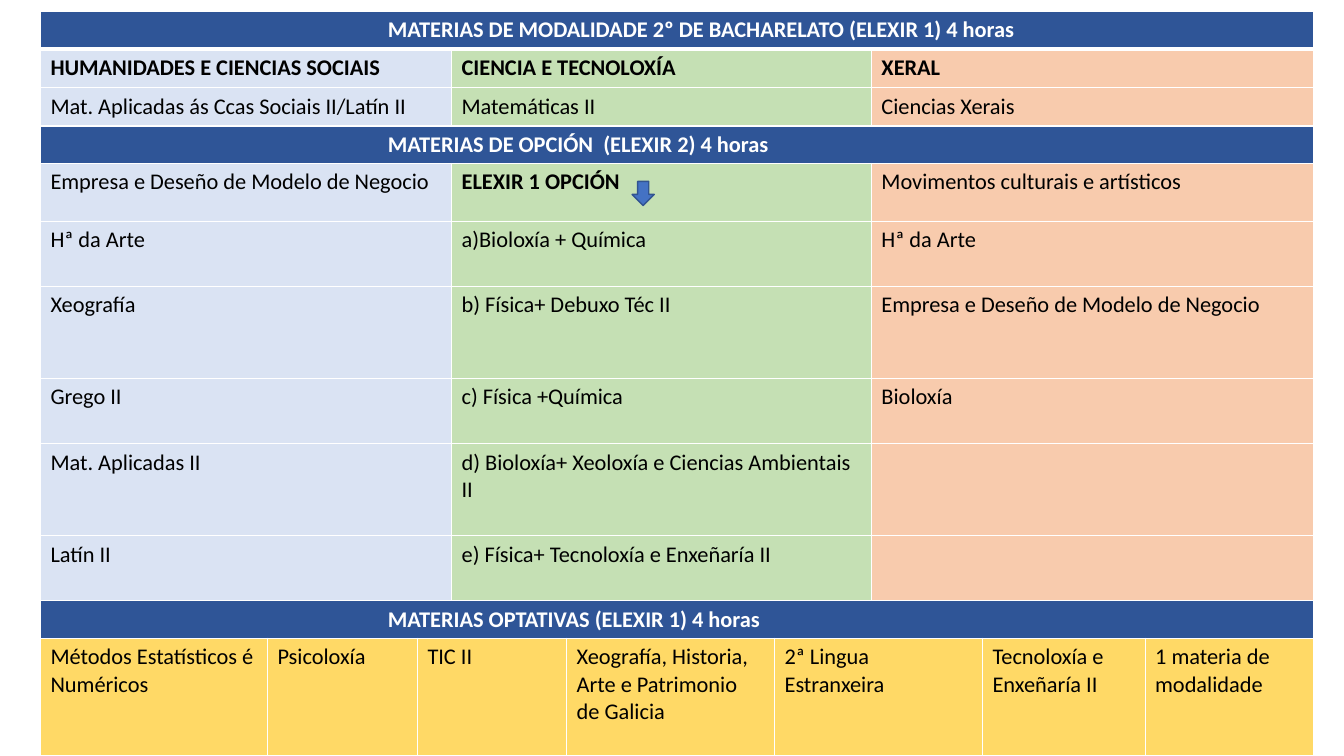
"""Build the slide with the table of second-year Bacharelato subjects."""
from dataclasses import dataclass

from lxml import etree
from pptx import Presentation
from pptx.dml.color import RGBColor
from pptx.enum import shapes
from pptx.oxml import ns
from pptx.util import Cm, Length, Pt


@dataclass(frozen=True)
class Theme:
    """Colours, font and sizes of the slide."""
    font: str = "Calibri"
    size: int = 16
    dark: str = "000000"
    white: str = "FFFFFF"
    band: str = "2F5597"
    human: str = "DAE3F3"
    tech: str = "C5E0B4"
    broad: str = "F8CBAD"
    choice: str = "FFD966"
    arrow: str = "4472C4"
    edge: str = "325491"
    thin: int = 1
    thick: int = 3


@dataclass(frozen=True)
class Row:
    """One table row: its height, cell texts, layout and weight."""
    high: float
    texts: tuple[str, ...]
    kind: str = "track"
    bold: tuple[int, ...] = ()


@dataclass(frozen=True)
class Plan:
    """First columns, fills, text colour and indent of a kind of row."""
    starts: tuple[int, ...]
    fills: tuple[str, ...]
    ink: str
    indent: float = 0


THEME = Theme()
WIDTHS = (5.72, 3.78, 0.86, 2.9, 5.24, 2.44, 2.8, 4.1, 4.24)
PLANS = {
    "band": Plan((0,), (THEME.band,), THEME.white, 8.5),
    "track": Plan((0, 3, 6), (THEME.human, THEME.tech, THEME.broad), THEME.dark),
    "choice": Plan((0, 1, 2, 4, 5, 7, 8), (THEME.choice,) * 7, THEME.dark),
}
ROWS = (
    Row(0.93, ("MATERIAS DE MODALIDADE 2º DE BACHARELATO (ELEXIR 1) 4 horas",), "band", (0,)),
    Row(0.98, ("HUMANIDADES E CIENCIAS SOCIAIS", "CIENCIA E TECNOLOXÍA", "XERAL"),
        bold=(0, 1, 2)),
    Row(0.96, ("Mat. Aplicadas ás Ccas Sociais II/Latín II", "Matemáticas II",
               "Ciencias Xerais")),
    Row(0.93, ("MATERIAS DE OPCIÓN  (ELEXIR 2) 4 horas",), "band", (0,)),
    Row(1.46, ("Empresa e Deseño de Modelo de Negocio", "ELEXIR 1 OPCIÓN",
               "Movimentos culturais e artísticos"), bold=(1,)),
    Row(1.64, ("Hª da Arte", "a)Bioloxía + Química", "Hª da Arte")),
    Row(2.32, ("Xeografía", "b) Física+ Debuxo Téc II",
               "Empresa e Deseño de Modelo de Negocio")),
    Row(1.64, ("Grego II", "c) Física +Química", "Bioloxía")),
    Row(2.32, ("Mat. Aplicadas II", "d) Bioloxía+ Xeoloxía e Ciencias Ambientais II", "")),
    Row(1.64, ("Latín II", "e) Física+ Tecnoloxía e Enxeñaría II", "")),
    Row(0.93, ("MATERIAS OPTATIVAS (ELEXIR 1) 4 horas",), "band", (0,)),
    Row(2.95, ("Métodos Estatísticos é Numéricos", "Psicoloxía", "TIC II",
               "Xeografía, Historia, Arte e Patrimonio de Galicia",
               "2ª Lingua Estranxeira", "Tecnoloxía e Enxeñaría II",
               "1 materia de modalidade"), "choice"),
)


def tint(fill, shade: str) -> None:
    """Make a fill solid in one colour."""
    fill.solid()
    fill.fore_color.rgb = RGBColor.from_string(shade)


def rule(cell, top: int, base: int) -> None:
    """Draw the white borders of a cell."""
    props = cell._tc.get_or_add_tcPr()
    sides = (("L", THEME.thin), ("R", THEME.thin), ("T", top), ("B", base))
    for spot, (side, width) in enumerate(sides):
        line = etree.Element(ns.qn(f"a:ln{side}"), w=str(Pt(width)))
        solid = etree.SubElement(line, ns.qn("a:solidFill"))
        etree.SubElement(solid, ns.qn("a:srgbClr"), val=THEME.white)
        props.insert(spot, line)


def write(cell, words: str, plan: Plan, bold: bool) -> None:
    """Put formatted text in a cell."""
    cell.text_frame.text = words
    para = cell.text_frame.paragraphs[0]
    if plan.indent:
        para._p.get_or_add_pPr().set("marL", str(Cm(plan.indent)))
    for run in para.runs:
        run.font.name = THEME.font
        run.font.size = Pt(THEME.size)
        run.font.bold = bold
        run.font.color.rgb = RGBColor.from_string(plan.ink)


def lay(table, index: int, row: Row) -> None:
    """Merge, fill, rule and write one row of the table."""
    plan = PLANS[row.kind]
    table.rows[index].height = Cm(row.high)
    ends = plan.starts[1:] + (len(WIDTHS),)
    top = THEME.thick if index == 1 else THEME.thin
    base = THEME.thick if index == 0 else THEME.thin
    for item, (start, end) in enumerate(zip(plan.starts, ends)):
        head = table.cell(index, start)
        if end - start > 1:
            head.merge(table.cell(index, end - 1))
        for col in range(start, end):
            cell = table.cell(index, col)
            tint(cell.fill, plan.fills[item])
            rule(cell, top, base)
        write(head, row.texts[item], plan, item in row.bold)


def grid(slide, left: Length, top: Length) -> None:
    """Add the table of subjects."""
    wide, high = Cm(sum(WIDTHS)), Cm(sum(row.high for row in ROWS))
    table = slide.shapes.add_table(len(ROWS), len(WIDTHS), left, top, wide, high).table
    table.first_row = table.horz_banding = False
    for col, width in zip(table.columns, WIDTHS):
        col.width = Cm(width)
    for index, row in enumerate(ROWS):
        lay(table, index, row)


def point(slide) -> None:
    """Add the arrow that points down to the options."""
    arrow = slide.shapes.add_shape(
        shapes.MSO_SHAPE.DOWN_ARROW, Cm(15.93), Cm(4.57), Cm(0.56), Cm(0.61))
    arrow.shadow.inherit = False
    tint(arrow.fill, THEME.arrow)
    tint(arrow.line.fill, THEME.edge)
    arrow.line.width = Pt(THEME.thin)


def main() -> None:
    """Build and save the slide."""
    deck = Presentation()
    deck.slide_width, deck.slide_height = Cm(33.87), Cm(19.05)
    slide = deck.slides.add_slide(deck.slide_layouts[6])
    grid(slide, Cm(1.02), Cm(0.29))
    point(slide)
    deck.save("out.pptx")


if __name__ == "__main__":
    main()
